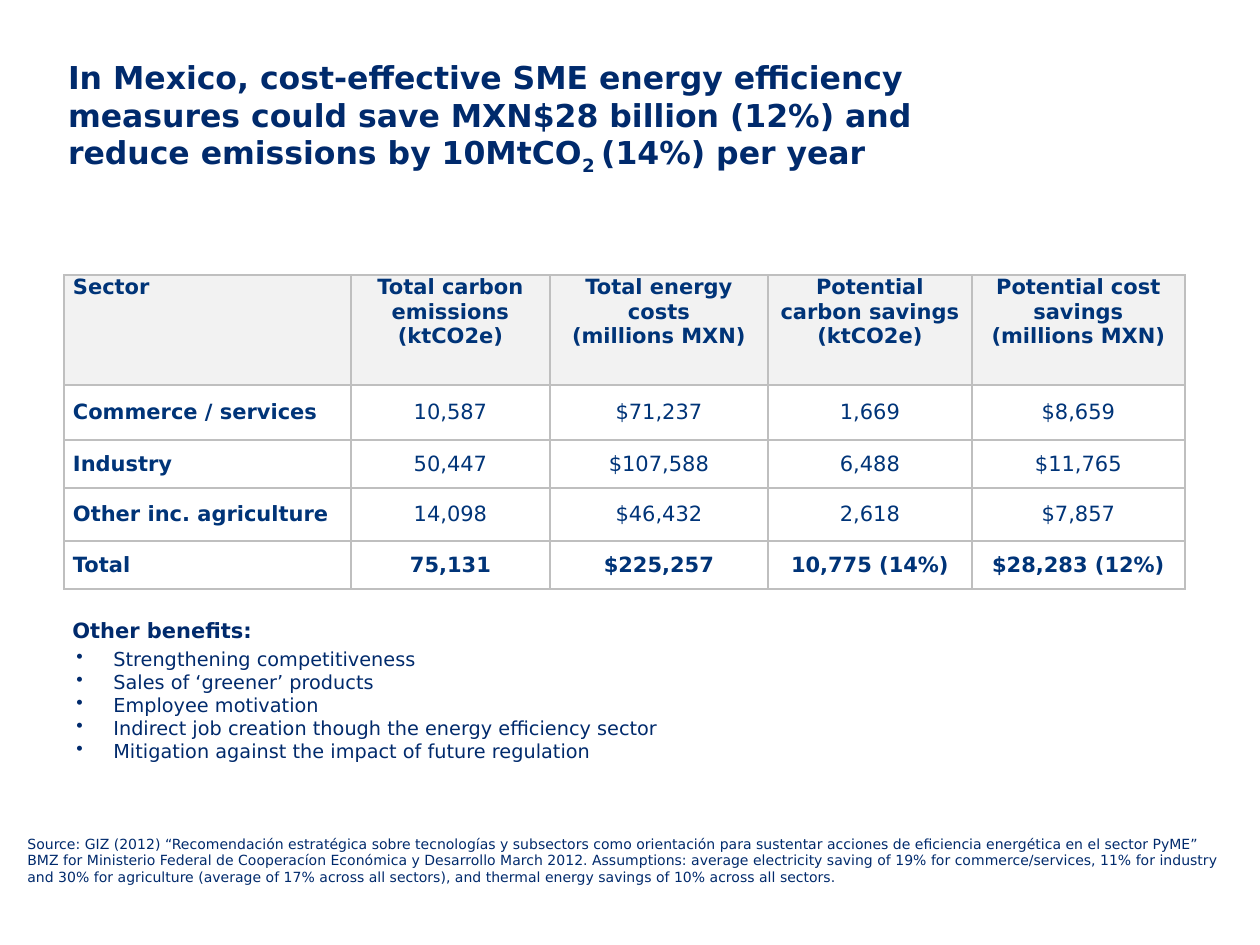
import lxml.etree
import pptx
import pptx.dml.color
import pptx.enum.text
import pptx.oxml.ns
import pptx.util

PX = 914400 / 126
NAVY, TABLE_BLUE = "002A6C", "003478"
BORDER, HEADER_FILL, BODY_FILL = "BFBFBF", "F2F2F2", "FFFFFF"
CENTER = pptx.enum.text.PP_ALIGN.CENTER
LEFT = pptx.enum.text.PP_ALIGN.LEFT
TOP = pptx.enum.text.MSO_ANCHOR.TOP
MIDDLE = pptx.enum.text.MSO_ANCHOR.MIDDLE

TITLE = [[
    ("In Mexico, cost-effective SME energy efficiency measures could save "
     "MXN$28 billion (12%) and reduce emissions by 10MtCO", 0),
    ("2 ", -25),
    ("(14%) per year", 0),
]]
COLUMN_WIDTHS = [287, 199, 218, 204, 213]
ROW_HEIGHTS = [110, 55, 48, 53, 48]
SECTOR_ROWS = [
    ["Sector", "Total carbon emissions\n(ktCO2e)", "Total energy costs\n(millions MXN)",
     "Potential carbon savings\n(ktCO2e)", "Potential cost savings\n(millions MXN)"],
    ["Commerce / services", "10,587", "$71,237", "1,669", "$8,659"],
    ["Industry", "50,447", "$107,588", "6,488", "$11,765"],
    ["Other inc. agriculture", "14,098", "$46,432", "2,618", "$7,857"],
    ["Total", "75,131", "$225,257", "10,775 (14%)", "$28,283 (12%)"],
]
BENEFITS = [
    "Strengthening competitiveness",
    "Sales of ‘greener’ products",
    "Employee motivation",
    "Indirect job creation though the energy efficiency sector",
    "Mitigation against the impact of future regulation",
]
SOURCE = (
    "Source: GIZ (2012) “Recomendación estratégica sobre tecnologías y subsectors como "
    "orientación para sustentar acciones de eficiencia energética en el sector PyME” BMZ for "
    "Ministerio Federal de Cooperacíon Económica y Desarrollo March 2012. Assumptions: average "
    "electricity saving of 19% for commerce/services, 11% for industry and 30% for agriculture "
    "(average of 17% across all sectors), and thermal energy savings of 10% across all sectors."
)


def px(length):
    return pptx.util.Emu(round(length * PX))


def rgb(color):
    return pptx.dml.color.RGBColor.from_string(color)


def add_child(parent, tag, **attributes):
    child = lxml.etree.SubElement(parent, pptx.oxml.ns.qn(tag))
    for key, value in attributes.items():
        child.set(key, str(value))
    return child


def assign(target, values):
    for key, value in values.items():
        setattr(target, key, value)


class SlideBuilder:
    font_name = "DejaVu Sans"

    def __init__(self, slide):
        self.slide = slide

    def fill_text(self, frame, paragraphs, size, color=NAVY, bold=False, align=LEFT, bullet=None):
        """Fill a frame; a paragraph is a string or a list of (text, baseline percent)."""
        for index, content in enumerate(paragraphs):
            paragraph = frame.paragraphs[0] if index == 0 else frame.add_paragraph()
            paragraph.alignment = align
            if bullet:
                properties = paragraph._p.get_or_add_pPr()
                properties.set("marL", str(px(37)))
                properties.set("indent", str(px(-37)))
                add_child(properties, "a:buChar", char=bullet)
            runs = [(content, 0)] if isinstance(content, str) else content
            for text, baseline in runs:
                run = paragraph.add_run()
                run.text = text
                assign(run.font, {"name": self.font_name, "size": pptx.util.Pt(size), "bold": bold})
                run.font.color.rgb = rgb(color)
                if baseline:
                    run._r.get_or_add_rPr().set("baseline", str(baseline * 1000))

    def text(self, box, paragraphs, size, frame_format=None, **style):
        frame = self.slide.shapes.add_textbox(*map(px, box)).text_frame
        assign(frame, {"word_wrap": True, **(frame_format or {})})
        self.fill_text(frame, paragraphs, size, **style)

    def cell_borders(self, cell):
        """Draw all four sides; must run before the cell gets its fill."""
        properties = cell._tc.get_or_add_tcPr()
        for side in "LRTB":
            line = add_child(properties, f"a:ln{side}", w=pptx.util.Pt(1))
            add_child(add_child(line, "a:solidFill"), "a:srgbClr", val=BORDER)

    def table(self, left, top, widths, heights, rows):
        box = map(px, (left, top, sum(widths), sum(heights)))
        table = self.slide.shapes.add_table(len(rows), len(widths), *box).table
        for column, width in zip(table.columns, widths):
            column.width = px(width)
        for row, height in zip(table.rows, heights):
            row.height = px(height)
        last = len(rows) - 1
        for r, values in enumerate(rows):
            for c, value in enumerate(values):
                cell = table.cell(r, c)
                self.cell_borders(cell)
                assign(cell, {
                    "margin_left": px(9), "margin_right": px(9),
                    "margin_top": 0, "margin_bottom": 0,
                    "vertical_anchor": MIDDLE if r else TOP,
                })
                cell.fill.solid()
                cell.fill.fore_color.rgb = rgb(BODY_FILL if r else HEADER_FILL)
                self.fill_text(cell.text_frame, value.split("\n"), 12, TABLE_BLUE,
                               bold=r in (0, last) or c == 0, align=CENTER if c else LEFT)


def main():
    deck = pptx.Presentation()
    assign(deck, {"slide_width": px(1260), "slide_height": px(945)})
    builder = SlideBuilder(deck.slides.add_slide(deck.slide_layouts[6]))

    margins = {f"margin_{side}": px(5) for side in ("left", "top", "right", "bottom")}
    builder.text((63, 38, 964, 158), TITLE, 18, {"vertical_anchor": MIDDLE, **margins}, bold=True)
    builder.table(64, 275, COLUMN_WIDTHS, ROW_HEIGHTS, SECTOR_ROWS)
    builder.text((15, 829, 1230, 63), [SOURCE], 8)
    builder.text((60, 611, 1121, 38), ["Other benefits:"], 12, bold=True)
    builder.text((64, 641, 1160, 79), BENEFITS, 11, bullet="•")
    deck.save("out.pptx")


if __name__ == "__main__":
    main()
